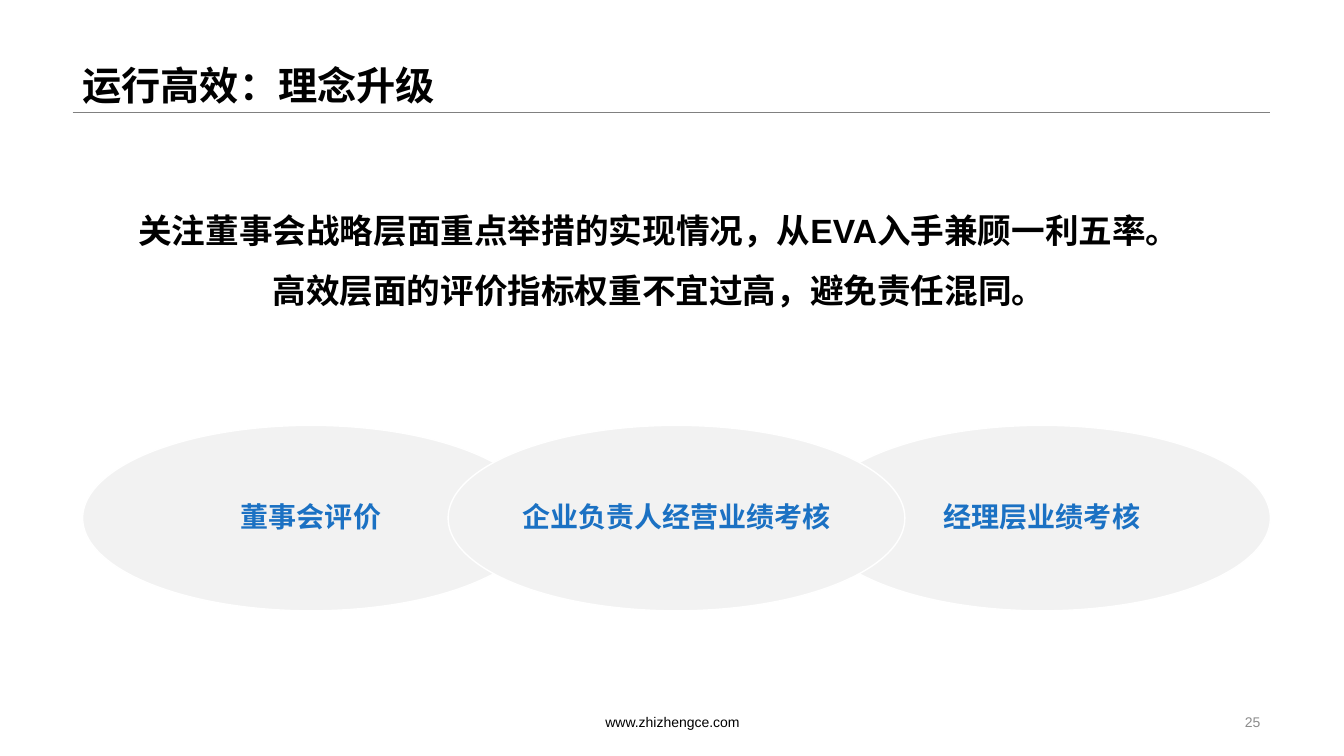
from lxml import etree
from pptx import Presentation
from pptx.dml.color import RGBColor
from pptx.enum.shapes import MSO_CONNECTOR, MSO_SHAPE
from pptx.enum.text import MSO_ANCHOR, PP_ALIGN
from pptx.oxml.ns import qn
from pptx.util import Inches, Pt

LEFT, CENTER, RIGHT = PP_ALIGN.LEFT, PP_ALIGN.CENTER, PP_ALIGN.RIGHT
TOP, MIDDLE, BOTTOM = MSO_ANCHOR.TOP, MSO_ANCHOR.MIDDLE, MSO_ANCHOR.BOTTOM
LINE, OVAL = MSO_CONNECTOR.STRAIGHT, MSO_SHAPE.OVAL

BLACK = RGBColor(0x00, 0x00, 0x00)
WHITE = RGBColor(0xFF, 0xFF, 0xFF)
GRAY = RGBColor(0x80, 0x80, 0x80)
MUTED = RGBColor(0x8C, 0x8C, 0x8C)
PALE = RGBColor(0xF2, 0xF2, 0xF2)
BLUE = RGBColor(0x1B, 0x71, 0xC3)
LATIN, HAN = "Arial", "Noto Sans CJK SC"


def write(shape, lines, size, color, bold=False, align=CENTER,
          anchor=TOP, font=LATIN, spacing=1.0):
    """Fill a shape with one paragraph per line."""
    frame = shape.text_frame
    frame.word_wrap = True
    frame.vertical_anchor = anchor
    for i, line in enumerate(lines):
        para = frame.add_paragraph() if i else frame.paragraphs[0]
        para.alignment = align
        para.line_spacing = spacing
        run = para.add_run()
        run.text = line
        run.font.size = Pt(size)
        run.font.bold = bold
        run.font.name = font
        run.font.color.rgb = color
        east = etree.Element(qn("a:ea"), typeface=HAN)
        run.font._element.find(qn("a:latin")).addnext(east)


def add_box(left, top, width, height):
    return slide.shapes.add_textbox(
        Inches(left), Inches(top), Inches(width), Inches(height))


deck = Presentation()
deck.slide_width, deck.slide_height = Inches(13.33), Inches(7.5)
slide = deck.slides.add_slide(deck.slide_layouts[6])

# Title and rule
rule = slide.shapes.add_connector(
    LINE, Inches(0.72), Inches(1.12), Inches(12.6), Inches(1.12))
rule.line.color.rgb = GRAY
rule.line.width = Pt(0.75)
etree.SubElement(rule._element.spPr, qn("a:effectLst"))
write(add_box(0.72, 0.14, 11.88, 0.98), ["运行高效：理念升级"], 28, BLACK,
      bold=True, align=LEFT, anchor=BOTTOM, font=HAN)

# Key message
write(add_box(0.39, 1.83, 12.29, 1.24),
      ["关注董事会战略层面重点举措的实现情况，从EVA入手兼顾一利五率。",
       "高效层面的评价指标权重不宜过高，避免责任混同。"],
      24, BLACK, bold=True, spacing=1.5)

# Overlapping ovals, the middle one in front
labels = ["董事会评价", "企业负责人经营业绩考核", "经理层业绩考核"]
for spot in (2, 0, 1):
    oval = slide.shapes.add_shape(
        OVAL, Inches(0.82 + spot * 3.625), Inches(4.22), Inches(4.53), Inches(1.84))
    oval.shadow.inherit = False
    oval.fill.solid()
    oval.fill.fore_color.rgb = PALE
    oval.line.color.rgb = WHITE
    oval.line.width = Pt(1)
    frame = oval.text_frame
    frame.margin_left = frame.margin_right = Inches(0)
    write(oval, [labels[spot]], 20, BLUE, bold=True, anchor=MIDDLE, spacing=0.9)

# Footer
write(add_box(4.85, 7.03, 3.64, 0.27), ["www.zhizhengce.com"], 10, BLACK)
write(add_box(8.5, 7.01, 4.1, 0.3), ["25"], 10, MUTED, align=RIGHT, anchor=MIDDLE)

deck.save("out.pptx")
